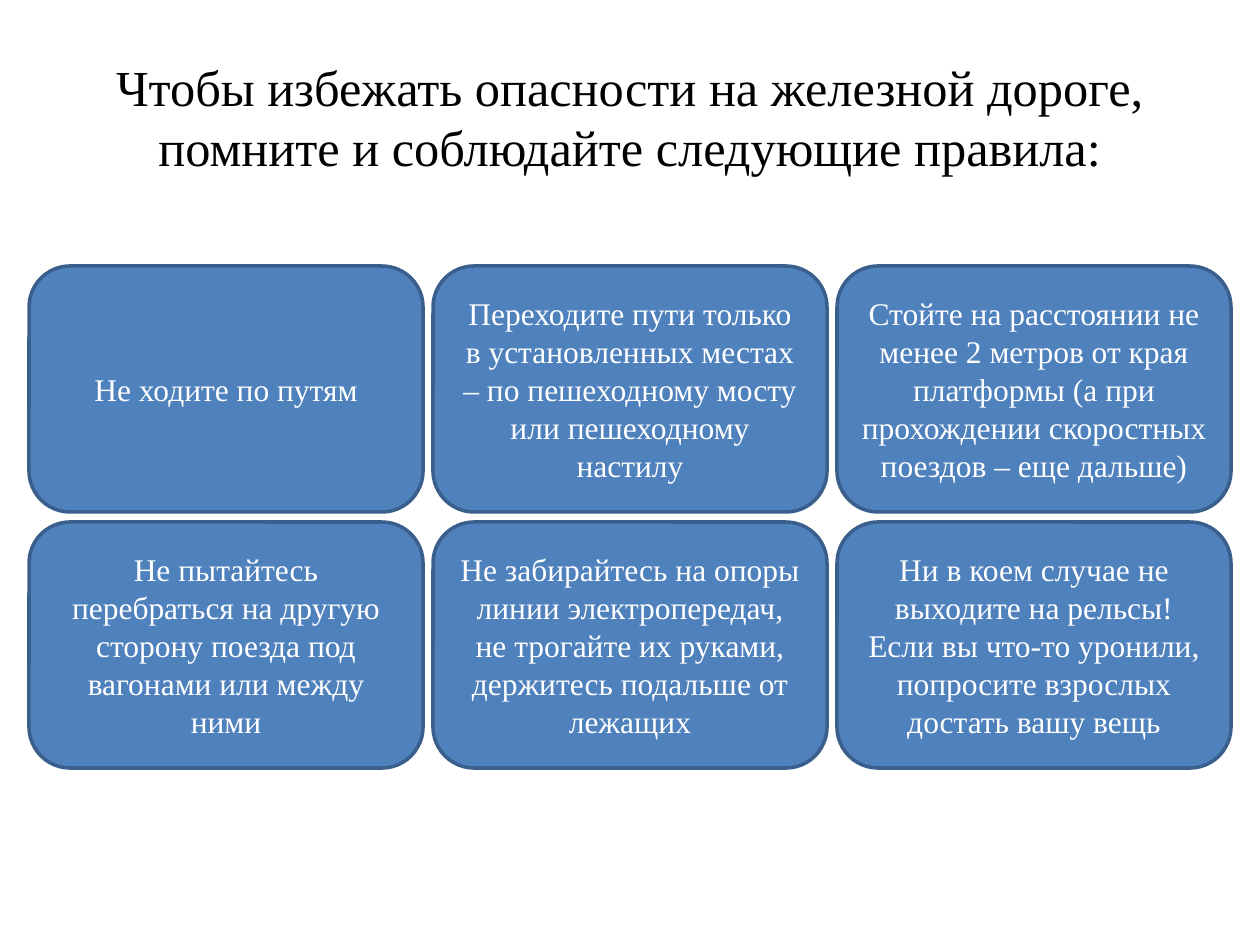
"""Builds a slide with six railway safety rules in a grid of rounded cards."""
from pptx import Presentation
from pptx.dml.color import RGBColor
from pptx.enum.shapes import MSO_SHAPE
from pptx.enum.text import MSO_ANCHOR, PP_ALIGN
from pptx.util import Emu, Pt

TITLE = "Чтобы избежать опасности на железной дороге, помните и соблюдайте следующие правила:"
RULES = [
    "Не ходите по путям",
    "Переходите пути только в установленных местах – по пешеходному мосту или пешеходному настилу",
    "Стойте на расстоянии не менее 2 метров от края платформы (а при прохождении скоростных поездов – еще дальше)",
    "Не пытайтесь перебраться на другую сторону поезда под вагонами или между ними",
    "Не забирайтесь на опоры линии электропередач, не трогайте их руками, держитесь подальше от лежащих",
    "Ни в коем случае не выходите на рельсы! Если вы что-то уронили, попросите взрослых достать вашу вещь",
]

FONT = "Times New Roman"
BLACK = RGBColor(0x00, 0x00, 0x00)
WHITE = RGBColor(0xFF, 0xFF, 0xFF)
CARD_BLUE = RGBColor(0x4F, 0x81, 0xBD)
BORDER_BLUE = RGBColor(0x3A, 0x5F, 0x8C)
ROUNDED = MSO_SHAPE.ROUNDED_RECTANGLE
MIDDLE = MSO_ANCHOR.MIDDLE
CENTER = PP_ALIGN.CENTER

COLUMNS = 3
GRID_LEFT, GRID_TOP = 29, 266
CARD_WIDTH, CARD_HEIGHT = 394, 246
GAP = 10


def px(length):
    return Emu(round(length * 914400 / 126))


def write(shape, text, size, color):
    frame = shape.text_frame
    frame.text = text
    frame.word_wrap = True
    frame.vertical_anchor = MIDDLE
    paragraph = frame.paragraphs[0]
    paragraph.alignment = CENTER
    paragraph.font.name = FONT
    paragraph.font.size = Pt(size)
    paragraph.font.color.rgb = color


def add_card(slide, index, rule):
    row, column = divmod(index, COLUMNS)
    card = slide.shapes.add_shape(
        ROUNDED,
        px(GRID_LEFT + column * (CARD_WIDTH + GAP)),
        px(GRID_TOP + row * (CARD_HEIGHT + GAP)),
        px(CARD_WIDTH),
        px(CARD_HEIGHT),
    )
    card.shadow.inherit = False
    card.fill.solid()
    card.fill.fore_color.rgb = CARD_BLUE
    card.line.color.rgb = BORDER_BLUE
    card.line.width = Pt(2)
    write(card, rule, 18, WHITE)


def main():
    deck = Presentation()
    deck.slide_width, deck.slide_height = px(1260), px(945)
    slide = deck.slides.add_slide(deck.slide_layouts[5])
    title = slide.shapes.title
    title.left, title.top, title.width, title.height = px(63), px(38), px(1134), px(157)
    write(title, TITLE, 28.8, BLACK)
    for index, rule in enumerate(RULES):
        add_card(slide, index, rule)
    deck.save("out.pptx")


if __name__ == "__main__":
    main()
